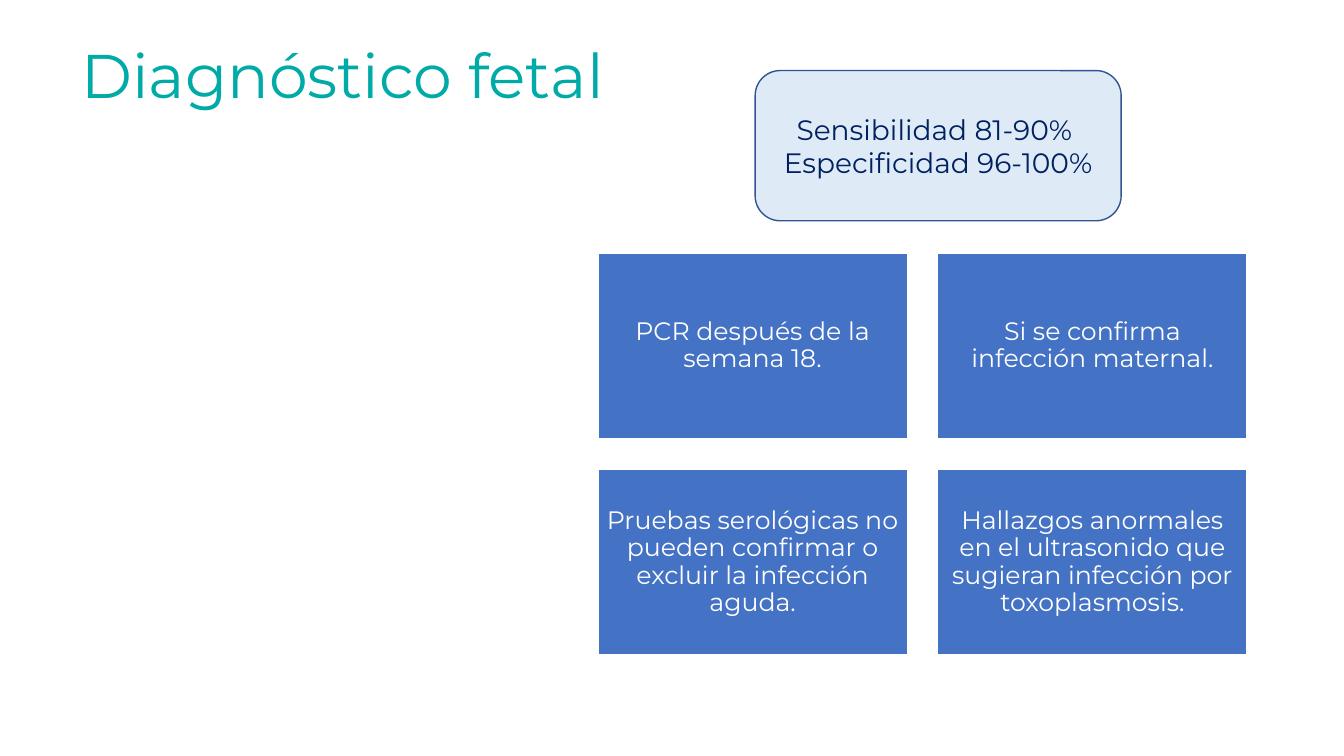
from pptx import Presentation
from pptx.dml.color import RGBColor
from pptx.enum.shapes import MSO_SHAPE
from pptx.enum.text import MSO_ANCHOR, PP_ALIGN
from pptx.util import Emu, Pt

RECT = MSO_SHAPE.RECTANGLE
ROUNDED = MSO_SHAPE.ROUNDED_RECTANGLE
MIDDLE = MSO_ANCHOR.MIDDLE
CENTER = PP_ALIGN.CENTER

PX = 9144  # 100 px to the inch
FONT = "Montserrat"
COLORS = {
    "title": "00AAA7",
    "card": "4472C4",
    "white": "FFFFFF",
    "accuracy": "DEEBF7",
    "accuracy_line": "325491",
    "accuracy_text": "002060",
}

# Card grid
GRID_LEFT, GRID_TOP = 593, 251
CARD_W, CARD_H = 307, 184
GAP_X, GAP_Y = 30, 31
COLUMNS = 2
CARDS = [
    "PCR después de la semana 18.",
    "Si se confirma infección maternal.",
    "Pruebas serológicas no pueden confirmar o excluir la infección aguda.",
    "Hallazgos anormales en el ultrasonido que sugieran infección por toxoplasmosis.",
]


def px(n):
    return Emu(n * PX)


def rgb(name):
    return RGBColor.from_string(COLORS[name])


def set_attrs(obj, values):
    for name, value in values.items():
        setattr(obj, name, value)


def write(sp, lines, size, color, spacing=1.0, margin=None):
    tf = sp.text_frame
    set_attrs(tf, {"word_wrap": True, "vertical_anchor": MIDDLE})
    if margin is not None:
        sides = ("left", "top", "right", "bottom")
        set_attrs(tf, {f"margin_{side}": px(margin) for side in sides})
    for i, line in enumerate(lines):
        p = tf.add_paragraph() if i else tf.paragraphs[0]
        set_attrs(p, {"alignment": CENTER, "line_spacing": spacing})
        r = p.add_run()
        r.text = line
        set_attrs(r.font, {"name": FONT, "size": Pt(size)})
        r.font.color.rgb = rgb(color)


def add_title(s, text, box):
    sp = s.shapes.title
    set_attrs(sp, dict(zip(("left", "top", "width", "height"), map(px, box))))
    write(sp, [text], 44, "title", spacing=0.9)


def add_box(s, kind, box, fill, line):
    sp = s.shapes.add_shape(kind, *map(px, box))
    sp.shadow.inherit = False
    sp.fill.solid()
    sp.fill.fore_color.rgb = rgb(fill)
    sp.line.color.rgb = rgb(line)
    sp.line.width = Pt(1)
    return sp


def add_cards(s):
    for i, text in enumerate(CARDS):
        row, col = divmod(i, COLUMNS)
        left = GRID_LEFT + col * (CARD_W + GAP_X)
        top = GRID_TOP + row * (CARD_H + GAP_Y)
        sp = add_box(s, RECT, (left, top, CARD_W, CARD_H), "card", "white")
        write(sp, [text], 18, "white", spacing=0.9, margin=7)


def main():
    prs = Presentation()
    prs.slide_width, prs.slide_height = px(1333), px(750)
    s = prs.slides.add_slide(prs.slide_layouts[5])

    # Heading
    add_title(s, "Diagnóstico fetal", (-69, 32, 818, 92))

    # Diagnostic criteria
    add_cards(s)

    # Test accuracy
    accuracy = add_box(s, ROUNDED, (749, 70, 363, 149), "accuracy", "accuracy_line")
    write(accuracy, ["Sensibilidad 81-90% ", "Especificidad 96-100%"], 20, "accuracy_text")

    prs.save("out.pptx")


if __name__ == "__main__":
    main()
